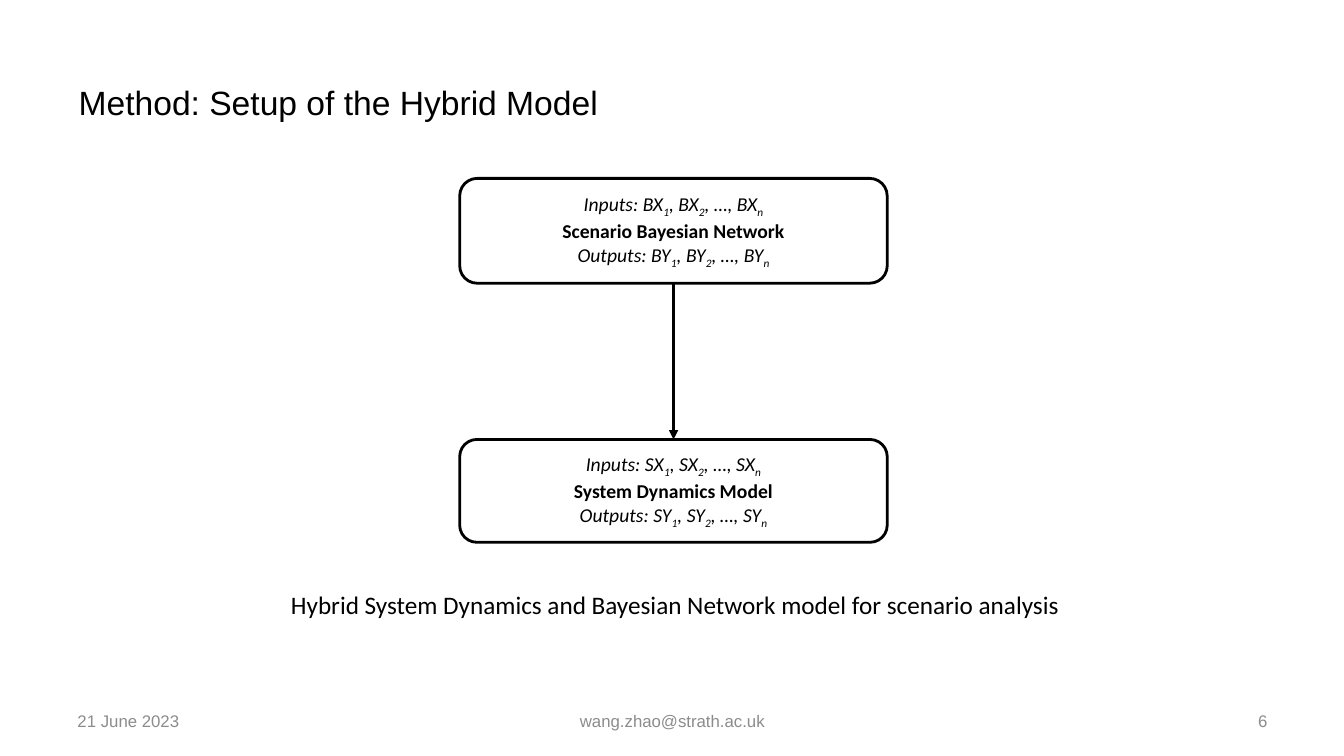
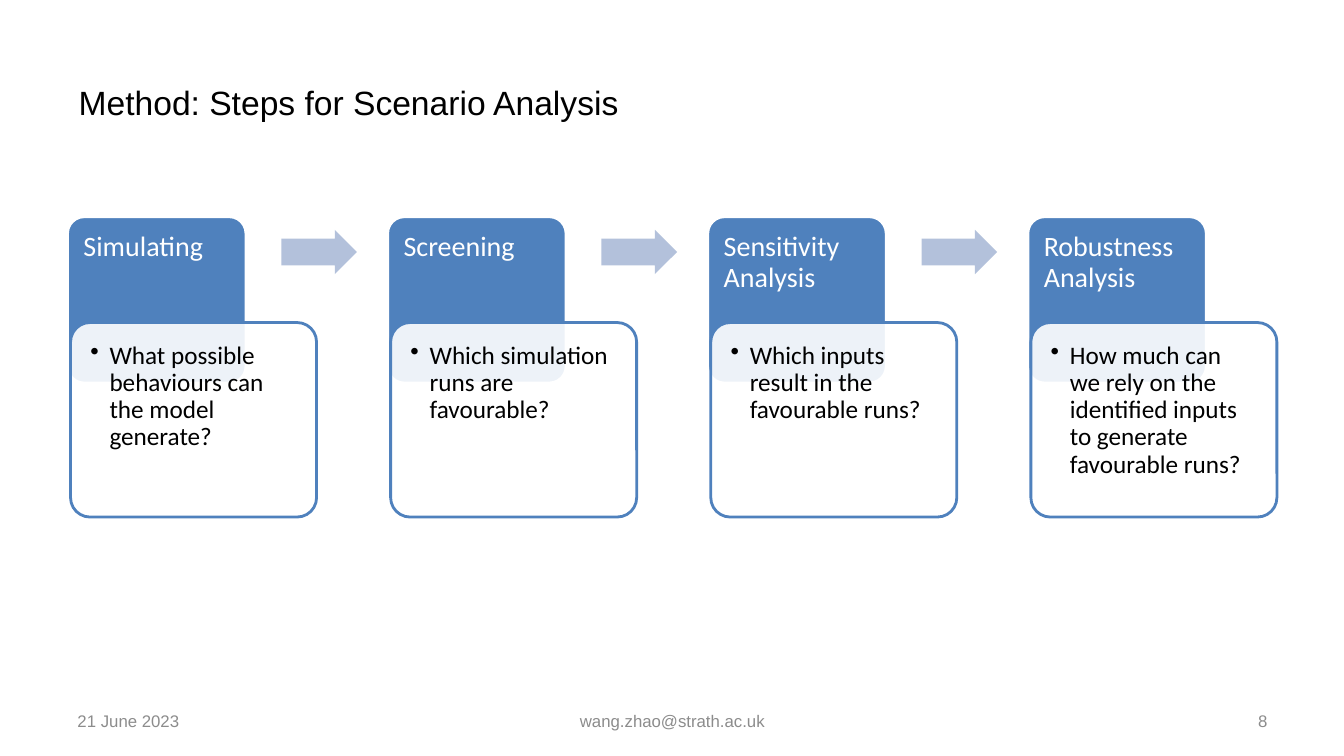
from lxml import etree
from pptx import Presentation
from pptx.dml.color import RGBColor
from pptx.enum import shapes, text
from pptx.oxml import ns
from pptx.util import Inches, Pt

BLACK, WHITE = "000000", "FFFFFF"
BLUE, PALE_BLUE, GREY = "4F81BD", "B3C1DB", "8C8C8C"
HEADING_FONT, BODY_FONT = "Arial", "Calibri"
LEFT, CENTER, RIGHT = text.PP_ALIGN.LEFT, text.PP_ALIGN.CENTER, text.PP_ALIGN.RIGHT
TOP, MIDDLE = text.MSO_ANCHOR.TOP, text.MSO_ANCHOR.MIDDLE
ROUNDED = shapes.MSO_SHAPE.ROUNDED_RECTANGLE

STEPS = [
    ("Simulating", "What possible behaviours can the model generate?"),
    ("Screening", "Which simulation runs are favourable?"),
    ("Sensitivity Analysis", "Which inputs result in the favourable runs?"),
    ("Robustness Analysis",
     "How much can we rely on the identified inputs to generate favourable runs?"),
]


def rgb(value):
    return RGBColor.from_string(value)


def add_child(parent, tag, **attributes):
    return etree.SubElement(parent, ns.qn(tag), attributes)


def add_run(paragraph, words, size, color=BLACK, font=BODY_FONT,
            bold=False, italic=False, subscript=False):
    run = paragraph.add_run()
    run.text = words
    run.font.size = Pt(size)
    run.font.name = font
    run.font.bold = bold
    run.font.italic = italic
    run.font.color.rgb = rgb(color)
    if subscript:
        run.font._element.set("baseline", "-25000")


def format_frame(shape, anchor, inset=None):
    """Wrap the text, anchor it and give all four sides the same inset."""
    frame = shape.text_frame
    frame.word_wrap = True
    frame.vertical_anchor = anchor
    if inset is not None:
        frame.margin_left = frame.margin_right = Inches(inset)
        frame.margin_top = frame.margin_bottom = Inches(inset)
    return frame


def add_box(slide, kind, box, fill, line=None, adjustments=()):
    shape = slide.shapes.add_shape(kind, *map(Inches, box))
    shape.shadow.inherit = False
    shape.fill.solid()
    shape.fill.fore_color.rgb = rgb(fill)
    if line:
        shape.line.color.rgb = rgb(line)
        shape.line.width = Pt(2)
    else:
        shape.line.fill.background()
    for index, value in enumerate(adjustments):
        shape.adjustments[index] = value
    return shape


def add_footer(slide, left, width, words, alignment):
    footer = slide.shapes.add_textbox(*map(Inches, (left, 6.95, width, 0.4)))
    paragraph = format_frame(footer, MIDDLE).paragraphs[0]
    paragraph.alignment = alignment
    add_run(paragraph, words, 12, GREY, HEADING_FONT)


def add_slide(presentation, heading, number):
    """Add a slide with its title and the three footers."""
    slide = presentation.slides.add_slide(presentation.slide_layouts[5])
    title = slide.shapes.title
    title.left, title.top, title.width, title.height = map(
        Inches, (0.68, 0.76, 11.97, 1.01))
    paragraph = format_frame(title, TOP).paragraphs[0]
    paragraph.alignment = LEFT
    add_run(paragraph, heading, 24, font=HEADING_FONT)
    add_footer(slide, 0.67, 3.11, "21 June 2023", LEFT)
    add_footer(slide, 4.56, 4.22, "wang.zhao@strath.ac.uk", CENTER)
    add_footer(slide, 9.56, 3.11, str(number), RIGHT)
    return slide


def add_variables(paragraph, label, symbol):
    """Write a label and the series symbol 1, symbol 2, …, symbol n."""
    for lead, index in ((f"{label}: ", "1"), (", ", "2"), (", …, ", "n")):
        add_run(paragraph, lead + symbol, 14, italic=True)
        add_run(paragraph, index, 14, italic=True, subscript=True)


def add_model(slide, top, height, name, letter):
    model = add_box(slide, ROUNDED, (4.56, top, 4.24, height), WHITE, BLACK)
    frame = format_frame(model, MIDDLE, 0)
    inputs, heading, outputs = (
        frame.paragraphs[0], frame.add_paragraph(), frame.add_paragraph())
    add_variables(inputs, "Inputs", letter + "X")
    add_run(heading, name, 14, bold=True)
    add_variables(outputs, "Outputs", letter + "Y")
    for paragraph in frame.paragraphs:
        paragraph.alignment = CENTER
    return model


def add_arrow(slide, upper, lower):
    """Join the bottom of one box to the top of another."""
    arrow = slide.shapes.add_connector(shapes.MSO_CONNECTOR.STRAIGHT, 0, 0, 0, 0)
    arrow.begin_connect(upper, 2)
    arrow.end_connect(lower, 0)
    arrow.line.color.rgb = rgb(BLACK)
    arrow.line.width = Pt(2.25)
    add_child(arrow.line._get_or_add_ln(), "a:tailEnd", type="triangle")
    add_child(arrow._element.spPr, "a:effectLst")


def add_step_text(shape, inset, words, size, color, bullet=False):
    paragraph = format_frame(shape, TOP, inset).paragraphs[0]
    if bullet:
        properties = paragraph._p.get_or_add_pPr()
        properties.set("marL", str(Inches(0.19)))
        properties.set("indent", str(Inches(-0.19)))
        add_child(properties, "a:buChar", char="•")
    paragraph.alignment = LEFT
    paragraph.line_spacing = 0.9
    add_run(paragraph, words, size, color)


def add_step(slide, left, name, question):
    header = add_box(slide, ROUNDED, (left, 2.15, 1.77, 1.65), BLUE, WHITE, [0.1])
    add_step_text(header, 0.11, name, 20, WHITE)
    card = add_box(slide, ROUNDED, (left + 0.03, 3.2, 2.44, 1.93), WHITE, BLUE, [0.1])
    fill_color = card._element.spPr.find(ns.qn("a:solidFill"))[0]
    add_child(fill_color, "a:alpha", val="90000")
    add_step_text(card, 0.14, question, 18, BLACK, bullet=True)


def build_model_slide(presentation):
    slide = add_slide(presentation, "Method: Setup of the Hybrid Model", 6)
    network = add_model(slide, 1.77, 1.04, "Scenario Bayesian Network", "B")
    dynamics = add_model(slide, 4.36, 1.02, "System Dynamics Model", "S")
    add_arrow(slide, network, dynamics)
    caption = add_box(slide, shapes.MSO_SHAPE.RECTANGLE, (2.85, 5.85, 7.69, 0.89), WHITE)
    paragraph = format_frame(caption, TOP, 0).paragraphs[0]
    paragraph.alignment = CENTER
    add_run(paragraph,
            "Hybrid System Dynamics and Bayesian Network model for scenario analysis", 18)


def build_steps_slide(presentation):
    slide = add_slide(presentation, "Method: Steps for Scenario Analysis", 8)
    first_left, pitch = 0.67, 3.175
    for index, (name, question) in enumerate(STEPS):
        left = first_left + index * pitch
        add_step(slide, left, name, question)
        if index < len(STEPS) - 1:
            add_box(slide, shapes.MSO_SHAPE.RIGHT_ARROW, (left + 2.12, 2.28, 0.75, 0.44),
                    PALE_BLUE, adjustments=[0.6, 0.5])


def main():
    presentation = Presentation()
    presentation.slide_width, presentation.slide_height = Inches(13.33), Inches(7.5)
    build_model_slide(presentation)
    build_steps_slide(presentation)
    presentation.save("out.pptx")


if __name__ == "__main__":
    main()
